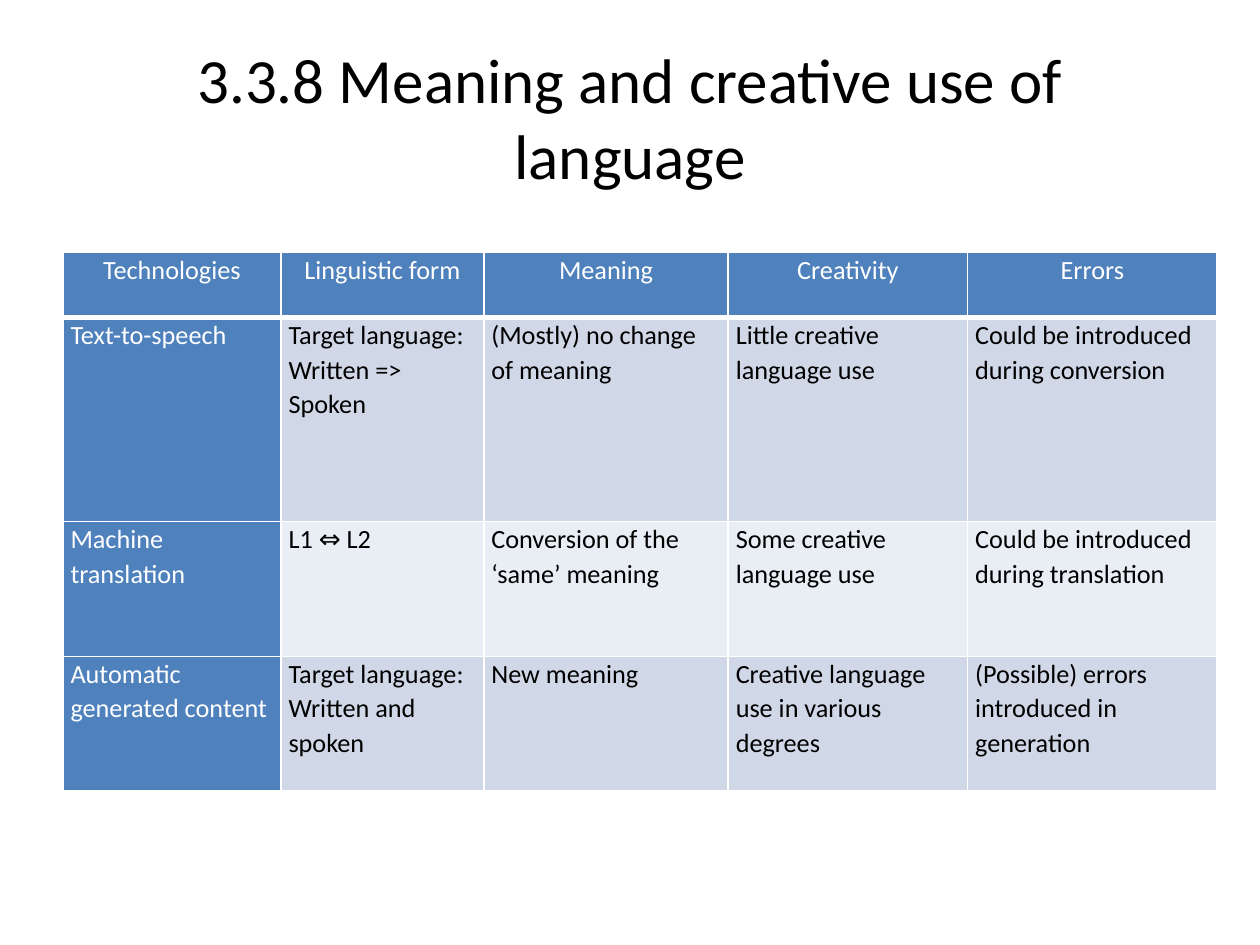
from lxml.etree import SubElement
from pptx import Presentation
from pptx.dml.color import RGBColor
from pptx.enum.text import MSO_ANCHOR, PP_ALIGN
from pptx.oxml.ns import qn
from pptx.util import Inches, Pt

WIDTH, HEIGHT = 10, 7.5
FONT = "Calibri"
BLACK, WHITE, BLUE = "000000", "FFFFFF", "4F81BD"
BANDS = ("D0D8E8", "E9EDF4")

TITLE = "3.3.8 Meaning and creative use of language"
COLUMN_WIDTHS = (1.73, 1.61, 1.94, 1.9, 1.98)
ROW_HEIGHTS = (0.52, 1.62, 1.07, 1.07)
ROWS = (
    ("Technologies", "Linguistic form", "Meaning", "Creativity", "Errors"),
    ("Text-to-speech", "Target language: Written => Spoken",
     "(Mostly) no change of meaning", "Little creative language use",
     "Could be introduced during conversion"),
    ("Machine translation", "L1 ⇔ L2", "Conversion of the ‘same’ meaning",
     "Some creative language use", "Could be introduced during translation"),
    ("Automatic generated content", "Target language: Written and spoken",
     "New meaning", "Creative language use in various degrees",
     "(Possible) errors introduced in generation"),
)


def color(value):
    return RGBColor.from_string(value)


def write(text_frame, text, size, text_color, alignment):
    """Set one paragraph of text and return it."""
    text_frame.text = text
    paragraph = text_frame.paragraphs[0]
    paragraph.alignment = alignment
    font = paragraph.runs[0].font
    font.name, font.size = FONT, Pt(size)
    font.color.rgb = color(text_color)
    return paragraph


def add_title(slide, left, top, width, height):
    box = slide.shapes.add_textbox(*map(Inches, (left, top, width, height)))
    text_frame = box.text_frame
    text_frame.word_wrap = True
    text_frame.margin_left = text_frame.margin_right = Inches(0.2)
    text_frame.vertical_anchor = MSO_ANCHOR.MIDDLE
    write(text_frame, TITLE, 36, BLACK, PP_ALIGN.CENTER)


def add_borders(cell, bottom_width):
    properties = cell._tc.get_or_add_tcPr()
    for side, points in (("L", 1), ("R", 1), ("T", 1), ("B", bottom_width)):
        line = SubElement(properties, qn(f"a:ln{side}"), w=str(Pt(points)))
        fill = SubElement(line, qn("a:solidFill"))
        SubElement(fill, qn("a:srgbClr"), val=WHITE)


def format_cell(cell, text, row, column):
    is_header = row == 0
    is_label = is_header or column == 0
    cell.margin_left = cell.margin_right = Inches(0.06)
    cell.margin_top = cell.margin_bottom = 0
    paragraph = write(cell.text_frame, text, 15, WHITE if is_label else BLACK,
                      PP_ALIGN.CENTER if is_header else PP_ALIGN.LEFT)
    paragraph.line_spacing = 1.07
    # Borders must come before the fill in the cell properties
    add_borders(cell, 3 if is_header else 1)
    cell.fill.solid()
    cell.fill.fore_color.rgb = color(BLUE if is_label else BANDS[(row - 1) % 2])


def add_comparison_table(slide, left, top):
    box = (left, top, sum(COLUMN_WIDTHS), sum(ROW_HEIGHTS))
    table = slide.shapes.add_table(
        len(ROWS), len(COLUMN_WIDTHS), *map(Inches, box)).table
    for column, width in zip(table.columns, COLUMN_WIDTHS):
        column.width = Inches(width)
    for row, height in zip(table.rows, ROW_HEIGHTS):
        row.height = Inches(height)
    for row, texts in enumerate(ROWS):
        for column, text in enumerate(texts):
            format_cell(table.cell(row, column), text, row, column)


def main():
    presentation = Presentation()
    presentation.slide_width = Inches(WIDTH)
    presentation.slide_height = Inches(HEIGHT)
    slide = presentation.slides.add_slide(presentation.slide_layouts[6])
    margin = 0.05 * WIDTH
    # Title across the top, table below it
    add_title(slide, margin, 0.04 * HEIGHT, WIDTH - 2 * margin, HEIGHT / 6)
    add_comparison_table(slide, margin, 2)
    presentation.save("out.pptx")


if __name__ == "__main__":
    main()
